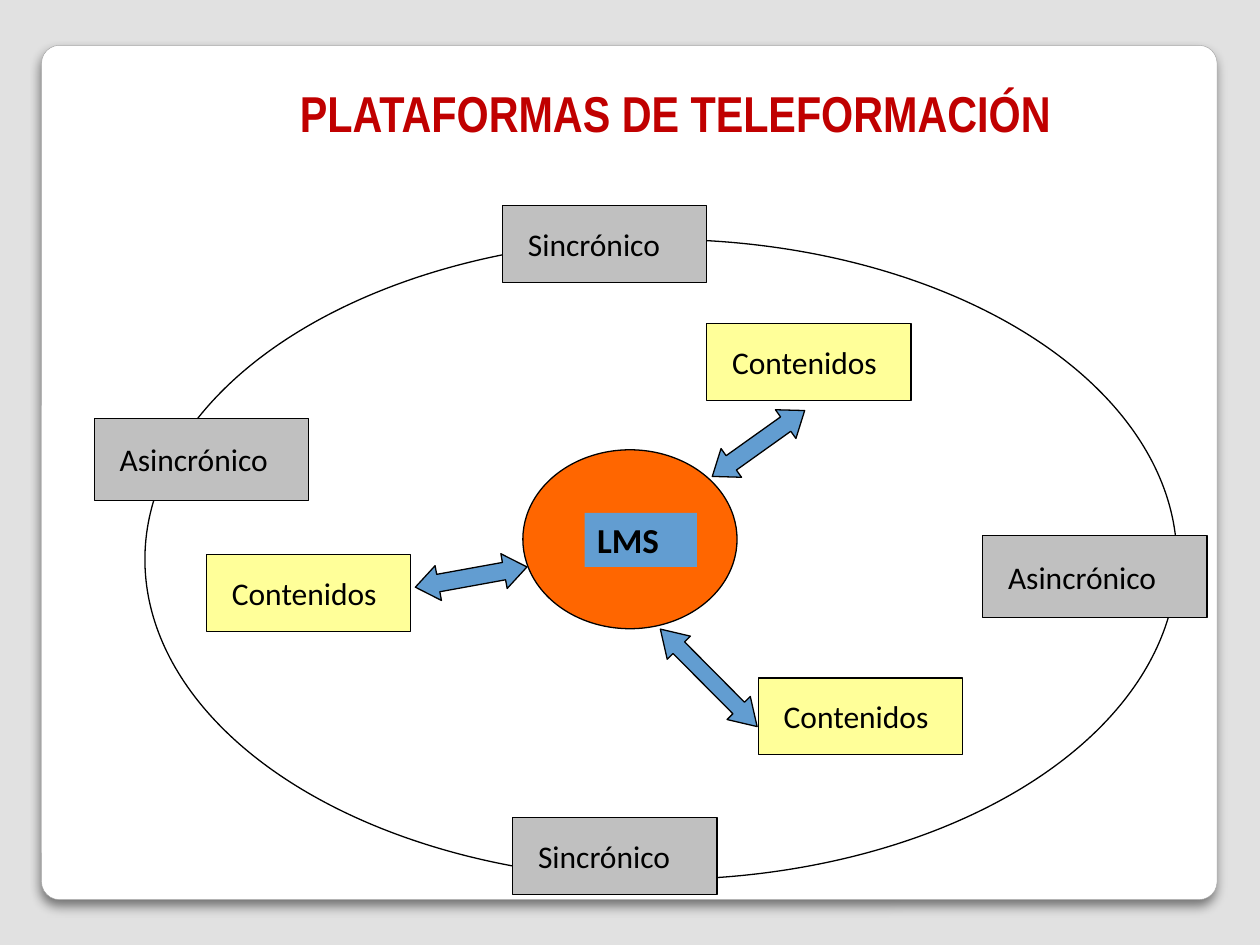
from dataclasses import dataclass

from lxml.etree import SubElement
from pptx import Presentation
from pptx.dml.color import RGBColor
from pptx.enum.shapes import MSO_SHAPE as Shape
from pptx.enum.text import MSO_ANCHOR as Anchor, PP_ALIGN as Align
from pptx.oxml.ns import qn
from pptx.util import Inches, Pt

COLORS = {
    "background": "E1E1E1", "panel": "FFFFFF", "edge": "A4A4A4",
    "title": "C00000", "black": "000000", "core": "FF6600",
    "blue": "629DD1", "content": "FFFF99", "channel": "C0C0C0",
}


@dataclass
class Box:
    text: str
    left: float
    top: float
    fill: str
    width: float = 1.62
    height: float = 0.61


@dataclass
class DoubleArrow:
    left: float
    top: float
    width: float
    height: float
    rotation: float
    head: float


BOXES = [
    Box("Contenidos", 6.02, 5.38, "content"),
    Box("Asincrónico", 0.75, 3.32, "channel", 1.7, 0.65),
    Box("Asincrónico", 7.8, 4.25, "channel", 1.78, 0.65),
    Box("Sincrónico", 3.99, 1.63, "channel"),
    Box("Contenidos", 1.64, 4.4, "content"),
    Box("Contenidos", 5.61, 2.57, "content"),
    Box("Sincrónico", 4.07, 6.49, "channel"),
]
ARROWS = [
    DoubleArrow(3.29, 4.44, 0.9, 0.28, 349.7, 0.66),
    DoubleArrow(5.08, 5.25, 1.09, 0.26, 45.2, 0.8),
    DoubleArrow(5.57, 3.38, 0.9, 0.28, 324.5, 0.66),
]


def rgb(name: str) -> RGBColor:
    return RGBColor.from_string(COLORS[name])


def add_shape(s, kind, left, top, width, height, fill=None, line="black", weight=0.75):
    """Add a preset shape; None for fill or line leaves that part out."""
    sp = s.shapes.add_shape(kind, *map(Inches, (left, top, width, height)))
    sp.shadow.inherit = False
    if fill:
        sp.fill.solid()
        sp.fill.fore_color.rgb = rgb(fill)
    else:
        sp.fill.background()
    if line:
        sp.line.color.rgb = rgb(line)
        sp.line.width = Pt(weight)
    else:
        sp.line.fill.background()
    return sp


def write(sp, text, *, size=18, font="Calibri", color="black", bold=False,
          indent=0.1, anchor=Anchor.MIDDLE):
    tf = sp.text_frame
    tf.word_wrap = True
    tf.vertical_anchor = anchor
    tf.margin_left, tf.margin_right = Inches(indent), Inches(0.1)
    tf.margin_top = tf.margin_bottom = Inches(0.05)
    p = tf.paragraphs[0]
    p.alignment = Align.LEFT
    r = p.add_run()
    r.text = text
    r.font.size, r.font.name, r.font.bold = Pt(size), font, bold
    r.font.color.rgb = rgb(color)


def add_panel(s):
    """Add the white rounded panel with a soft shadow below it."""
    panel = add_shape(s, Shape.ROUNDED_RECTANGLE, 0.33, 0.36, 9.33, 6.78,
                      "panel", "edge", 0.25)
    panel.adjustments[0] = 0.021
    effects = panel._element.spPr.find(qn("a:effectLst"))
    shadow = SubElement(effects, qn("a:outerShdw"), blurRad=str(Pt(6)),
                        dist=str(Pt(4)), dir="5400000", rotWithShape="0")
    color = SubElement(shadow, qn("a:srgbClr"), val=COLORS["black"])
    SubElement(color, qn("a:alpha"), val="50000")
    return panel


def add_title(s, text: str):
    title = s.shapes.title
    title.left, title.top = Inches(2.01), Inches(0.44)
    title.width, title.height = Inches(6.81), Inches(0.74)
    write(title, text, size=28.8, font="Arial Narrow", color="title",
          bold=True, indent=0.37, anchor=Anchor.BOTTOM)
    return title


def add_box(s, box: Box):
    sp = add_shape(s, Shape.RECTANGLE, box.left, box.top, box.width,
                   box.height, box.fill)
    write(sp, box.text, indent=0.2)


def add_arrow(s, arrow: DoubleArrow):
    sp = add_shape(s, Shape.LEFT_RIGHT_ARROW, arrow.left, arrow.top,
                   arrow.width, arrow.height, "blue")
    sp.rotation = arrow.rotation
    sp.adjustments[0], sp.adjustments[1] = 0.5, arrow.head


def main():
    prs = Presentation()
    prs.slide_width, prs.slide_height = Inches(10), Inches(7.5)
    s = prs.slides.add_slide(prs.slide_layouts[5])
    s.background.fill.solid()
    s.background.fill.fore_color.rgb = rgb("background")

    title = add_title(s, "PLATAFORMAS DE TELEFORMACIÓN")
    panel = add_panel(s)
    title._element.addprevious(panel._element)

    add_shape(s, Shape.OVAL, 1.15, 1.9, 8.19, 5.08)
    add_shape(s, Shape.OVAL, 4.15, 3.57, 1.7, 1.42, "core")
    lms = add_shape(s, Shape.RECTANGLE, 4.64, 4.07, 0.89, 0.43, "blue", None)
    write(lms, "LMS", size=20, bold=True)
    for box in BOXES:
        add_box(s, box)
    for arrow in ARROWS:
        add_arrow(s, arrow)

    prs.save("out.pptx")


if __name__ == "__main__":
    main()
